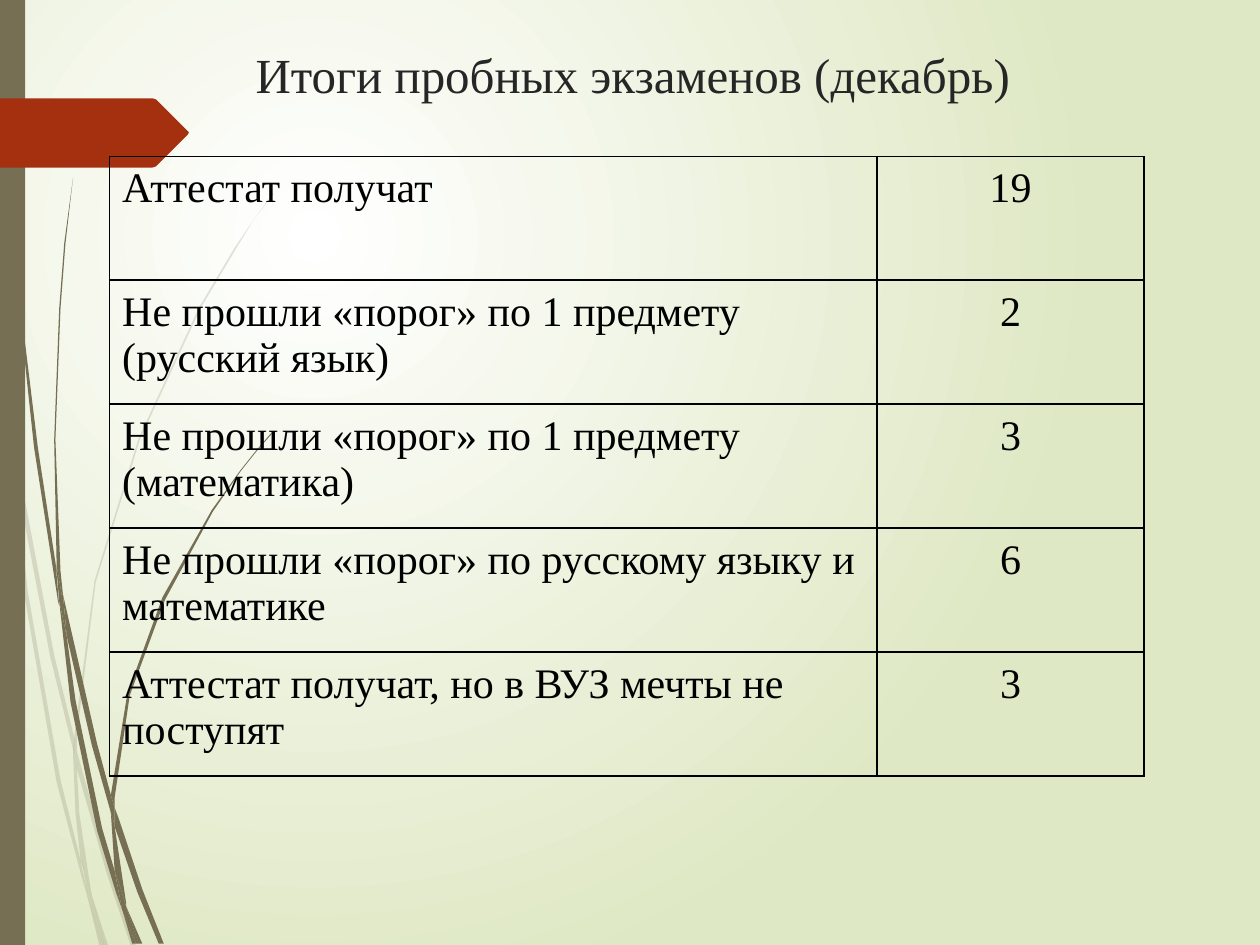
from lxml.etree import SubElement
from pptx import Presentation
from pptx.dml.color import RGBColor
from pptx.enum.shapes import MSO_SHAPE
from pptx.enum.text import MSO_ANCHOR, PP_ALIGN
from pptx.oxml.ns import qn
from pptx.util import Inches, Pt

COLORS = {"white": "FFFFFF", "green": "DFE8C4", "olive": "766F54",
          "red": "A53010", "title": "262626", "black": "000000"}
FONT = "Times New Roman"


def paint(shape, color, opacity=100):
    shape.shadow.inherit = False
    shape.line.fill.background()
    shape.fill.solid()
    shape.fill.fore_color.rgb = RGBColor.from_string(COLORS[color])
    if opacity < 100:
        srgb = shape._element.spPr.find(qn("a:solidFill")).find(qn("a:srgbClr"))
        SubElement(srgb, qn("a:alpha"), val=str(opacity * 1000))


def draw_outline(points, color, opacity=100):
    start, *rest = [(Inches(x), Inches(y)) for x, y in points]
    builder = slide.shapes.build_freeform(*start)
    builder.add_line_segments(rest, close=True)
    paint(builder.convert_to_shape(), color, opacity)


prs = Presentation()
prs.slide_width, prs.slide_height = Inches(10), Inches(7.5)
slide = prs.slides.add_slide(prs.slide_layouts[6])

# Background: radial gradient, white at the upper left
background = slide.background.fill
background.gradient()
for stop, color, position in zip(background.gradient_stops, ("white", "green"), (0, 1)):
    stop.color.rgb = RGBColor.from_string(COLORS[color])
    stop.position = position
gradient = slide._element.xpath(".//p:bg//a:gradFill")[0]
gradient.remove(gradient.find(qn("a:lin")))
radial = SubElement(gradient, qn("a:path"), path="circle")
SubElement(radial, qn("a:fillToRect"), l="50000", t="50000", r="100000", b="100000")

# Grass blades: outlines in inches, pale ones behind
pale_blades = [
    [(0.08, 3.5), (0.06, 3.22), (0, 2.82), (0, 2.99), (0.07, 3.44)],
    [(0.4, 5.22), (0.59, 5.99), (0.59, 5.86), (0.43, 5.2), (0.1, 3.45), (0.12, 3.76)],
    [(0.64, 6.07), (0.61, 5.96), (0.61, 6.1), (0.85, 6.94), (1.04, 7.51), (1.08, 7.51),
     (0.88, 6.92)],
    [(0.83, 7.51), (0.86, 7.51), (0.73, 7.11)],
    [(0.64, 6.83), (0.48, 6.19), (0.22, 4.69), (0.12, 3.76), (0.08, 3.5), (0.19, 4.7),
     (0.45, 6.21), (0.64, 6.93), (0.7, 7.14), (0.69, 7.07)],
    [(0.58, 5.99), (0.6, 6.46), (0.64, 6.83), (0.67, 6.92), (0.73, 7.11), (0.72, 7.06),
     (0.63, 6.46), (0.61, 6.1), (0.61, 6.08)],
    [(0.61, 5.84), (0.76, 4.62), (1.11, 3.49), (1.59, 2.45), (1.87, 1.98), (2.01, 1.75),
     (2.17, 1.54), (2.17, 1.53), (2.01, 1.75), (1.86, 1.97), (1.58, 2.44), (1.1, 3.48),
     (0.75, 4.61), (0.59, 5.84), (0.59, 5.86), (0.61, 5.96)],
    [(0.7, 7.14), (0.79, 7.51), (0.82, 7.51)],
    [(0.61, 6.08), (0.61, 6.1), (0.61, 5.96), (0.59, 5.86), (0.58, 5.99)],
    [(0.67, 6.92), (0.65, 6.83), (0.69, 7.07), (0.7, 7.14), (0.82, 7.51), (0.83, 7.51),
     (0.73, 7.11)],
]
dark_blades = [
    [(0.05, 1.1), (0.14, 2.33), (0.27, 3.55), (0.46, 4.77), (0.47, 4.81), (0.45, 4.57),
     (0.45, 4.53), (0.3, 3.55), (0.15, 2.32), (0.06, 1.09), (0.04, 0.48), (0.03, 0),
     (0.02, 0), (0.03, 0.48)],
    [(0.73, 5.92), (0.88, 6.45), (0.88, 6.33), (0.88, 6.31), (0.77, 5.9), (0.5, 4.72),
     (0.53, 5.05)],
    [(0.94, 6.49), (0.91, 6.41), (0.91, 6.56), (1.09, 7.08), (1.26, 7.49), (1.3, 7.49),
     (1.13, 7.06)],
    [(0.91, 6.91), (0.81, 6.57), (0.6, 5.56), (0.53, 5.05), (0.47, 4.77), (0.56, 5.57),
     (0.77, 6.59), (0.92, 7.08), (0.97, 7.22), (0.96, 7.17)],
    [(0.5, 4.72), (0.48, 4.53), (0.44, 3.49), (0.48, 2.45), (0.52, 1.93), (0.58, 1.41),
     (0.51, 1.93), (0.47, 2.45), (0.43, 3.49), (0.45, 4.49), (0.49, 4.72)],
    [(1.1, 7.49), (1.13, 7.49), (1, 7.19)],
    [(0.47, 4.77), (0.53, 5.05), (0.5, 4.72), (0.49, 4.72), (0.45, 4.49), (0.45, 4.53)],
    [(0.91, 6.33), (1.03, 5.52), (1.31, 4.76), (1.69, 4.06), (1.91, 3.74), (2.03, 3.59),
     (2.16, 3.44), (2.15, 3.44), (2.03, 3.58), (1.91, 3.73), (1.68, 4.05), (1.29, 4.74),
     (1.01, 5.51), (0.88, 6.31), (0.91, 6.41)],
    [(0.97, 7.22), (1.05, 7.49), (1.08, 7.49)],
    [(0.88, 6.45), (0.91, 6.91), (0.96, 7.06), (1, 7.19), (1, 7.16), (0.91, 6.56),
     (0.9, 6.51)],
    [(0.88, 6.45), (0.9, 6.51), (0.91, 6.56), (0.91, 6.41), (0.88, 6.31), (0.88, 6.33)],
    [(0.96, 7.06), (0.91, 6.91), (0.96, 7.17), (0.97, 7.22), (1.08, 7.49), (1.1, 7.49),
     (1, 7.19)],
]
for blades, opacity in ((pale_blades, 20), (dark_blades, 100)):
    for blade in blades:
        draw_outline(blade, "olive", opacity)

# Side bar and arrow tab
side_bar = slide.shapes.add_shape(MSO_SHAPE.RECTANGLE, 0, 0, Inches(0.2), Inches(7.5))
paint(side_bar, "olive")
draw_outline([(0, 0.78), (1.21, 0.78), (1.24, 0.79), (1.49, 1.04), (1.5, 1.05),
              (1.49, 1.07), (1.24, 1.32), (1.21, 1.33), (0, 1.33)], "red")

# Title
title = slide.shapes.add_textbox(Inches(1.93), Inches(0.3), Inches(7.8), Inches(0.89))
title.text_frame.word_wrap = True
title.text_frame.vertical_anchor = MSO_ANCHOR.TOP
heading = title.text_frame.paragraphs[0]
heading.text = "Итоги пробных экзаменов (декабрь)"
heading.font.size = Pt(28)
heading.font.name = FONT
heading.font.color.rgb = RGBColor.from_string(COLORS["title"])

# Results table
results = [
    ("Аттестат получат", "19"),
    ("Не прошли «порог» по 1 предмету (русский язык)", "2"),
    ("Не прошли «порог» по 1 предмету (математика)", "3"),
    ("Не прошли «порог» по русскому языку и математике", "6"),
    ("Аттестат получат, но в ВУЗ мечты не поступят", "3"),
]
table = slide.shapes.add_table(len(results), 2, Inches(0.87), Inches(1.24),
                               Inches(8.21), Inches(4.92)).table
table.first_row = table.horz_banding = False
for column, width in zip(table.columns, (6.09, 2.12)):
    column.width = Inches(width)
for row, texts in zip(table.rows, results):
    for cell, text, align in zip(row.cells, texts, (PP_ALIGN.LEFT, PP_ALIGN.CENTER)):
        cell.margin_left = cell.margin_right = Inches(0.1)
        cell.margin_top = cell.margin_bottom = Inches(0.07)
        for side in ("lnL", "lnR", "lnT", "lnB"):
            border = SubElement(cell._tc.get_or_add_tcPr(), qn(f"a:{side}"), w=str(Pt(1)))
            SubElement(SubElement(border, qn("a:solidFill")), qn("a:srgbClr"),
                       val=COLORS["black"])
        cell.fill.background()
        paragraph = cell.text_frame.paragraphs[0]
        paragraph.text = text
        paragraph.alignment = align
        paragraph.font.size = Pt(24)
        paragraph.font.name = FONT
        paragraph.font.color.rgb = RGBColor.from_string(COLORS["black"])

prs.save("out.pptx")
